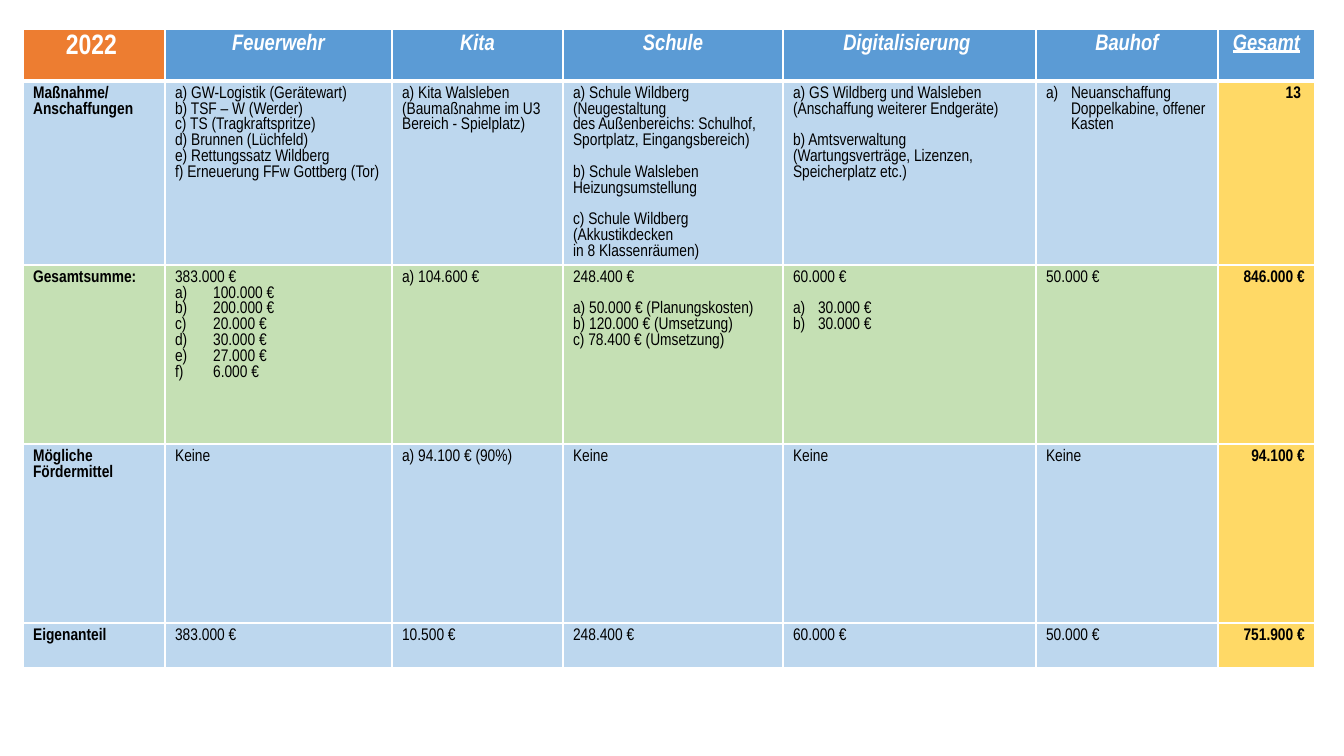
from collections import namedtuple

from lxml import etree
from pptx import Presentation
from pptx import util as u
from pptx.dml.color import RGBColor
from pptx.enum import text
from pptx.oxml import ns

EMU_PER_PX = 914400 / 100.8
FONT = "Arial Narrow"
WHITE, BLACK = "FFFFFF", "000000"
ORANGE, BLUE, GOLD = "ED7D31", "5B9BD5", "FFD966"
PALE_BLUE, PALE_GREEN = "BDD7EE", "C5E0B4"
GAP = 11.25  # one text line, in points
CENTER, RIGHT = text.PP_ALIGN.CENTER, text.PP_ALIGN.RIGHT

# A line of a cell: space above in points, hanging indent of its letter in px
Line = namedtuple("Line", "words gap indent", defaults=(0, 0))

COLUMN_WIDTHS = [142, 227, 171, 220, 253, 182, 97]
ROW_HEIGHTS = [52, 184, 179, 179, 45]
AREAS = ["Feuerwehr", "Kita", "Schule", "Digitalisierung ", "Bauhof"]

MEASURES = [
    [Line("a) GW-Logistik (Gerätewart)"), Line("b) TSF – W (Werder)"),
     Line("c) TS (Tragkraftspritze)"), Line("d) Brunnen (Lüchfeld)"),
     Line("e) Rettungssatz Wildberg"), Line("f) Erneuerung FFw Gottberg (Tor)")],
    [Line("a) Kita Walsleben (Baumaßnahme im U3 Bereich - Spielplatz)")],
    [Line("a) Schule Wildberg (Neugestaltung"), Line("des Außenbereichs: Schulhof,"),
     Line("Sportplatz, Eingangsbereich)"),
     Line("b) Schule Walsleben Heizungsumstellung", GAP),
     Line("c) Schule Wildberg (Akkustikdecken", GAP), Line("in 8 Klassenräumen)")],
    [Line("a) GS Wildberg und Walsleben"), Line("(Anschaffung weiterer Endgeräte)"),
     Line("b) Amtsverwaltung", GAP),
     Line("(Wartungsverträge, Lizenzen, Speicherplatz etc.)")],
    [Line("Neuanschaffung Doppelkabine, offener Kasten", indent=25)],
]
FIRE_SUMS = ["100.000 €", "200.000 €", "20.000 €", "30.000 €", "27.000 €", "6.000 €"]
SUMS = [
    [Line("383.000 €")] + [Line(amount, indent=38) for amount in FIRE_SUMS],
    [Line("a) 104.600 €")],
    [Line("248.400 €"), Line("a) 50.000 € (Planungskosten)", GAP),
     Line("b) 120.000 € (Umsetzung)"), Line("c) 78.400 € (Umsetzung)")],
    [Line("60.000 €"), Line("30.000 €", GAP, 25), Line("30.000 €", indent=25)],
    [Line("50.000 €")],
]
FUNDING = [[Line(words)] for words in
           ["Keine", "a) 94.100 € (90%)", "Keine", "Keine", "Keine"]]
OWN_SHARE = [[Line(words)] for words in
             ["383.000 €", "10.500 €", "248.400 €", "60.000 €", "50.000 €"]]

# Heading, cells, total, fill
BODY = [
    ("Maßnahme/ Anschaffungen", MEASURES, "13 ", PALE_BLUE),
    ("Gesamtsumme:", SUMS, "846.000 €", PALE_GREEN),
    ("Mögliche Fördermittel", FUNDING, "94.100 €", PALE_BLUE),
    ("Eigenanteil", OWN_SHARE, "751.900 €", PALE_BLUE),
]


def px(length):
    return u.Emu(round(length * EMU_PER_PX))


def color(value):
    return RGBColor.from_string(value)


def add_span(para, words, size=12, ink=BLACK, bold=False, italic=False, underline=False):
    span = para.add_run()
    span.text = words
    font = span.font
    font.name, font.size = FONT, u.Pt(size)
    font.bold, font.italic, font.underline = bold, italic, underline
    font.color.rgb = color(ink)


def number_para(para, indent):
    """Give the paragraph an automatic letter, a) b) c), with a hanging indent."""
    props = para._p.get_or_add_pPr()
    props.set("marL", str(px(indent)))
    props.set("indent", str(-px(indent)))
    etree.SubElement(props, ns.qn("a:buFont"), typeface=FONT)
    etree.SubElement(props, ns.qn("a:buAutoNum"), type="alphaLcParenR")


def style_cell(cell, fill, top=1, bottom=1):
    """Fill the cell and draw its white borders, widths in points."""
    cell.fill.solid()
    cell.fill.fore_color.rgb = color(fill)
    props = cell._tc.get_or_add_tcPr()
    for place, (side, width) in enumerate(
            [("lnL", 1), ("lnR", 1), ("lnT", top), ("lnB", bottom)]):
        border = etree.Element(ns.qn("a:" + side), w=str(u.Pt(width)))
        paint = etree.SubElement(border, ns.qn("a:solidFill"))
        etree.SubElement(paint, ns.qn("a:srgbClr"), val=WHITE)
        props.insert(place, border)


def write_lines(cell, lines, bold=False, align=None):
    for index, line in enumerate(lines):
        frame = cell.text_frame
        para = frame.add_paragraph() if index else frame.paragraphs[0]
        para.alignment = align
        if line.gap:
            para.space_before = u.Pt(line.gap)
        if line.indent:
            number_para(para, line.indent)
        add_span(para, line.words, bold=bold)


def add_budget_table(page):
    frame = page.shapes.add_table(len(ROW_HEIGHTS), len(COLUMN_WIDTHS), px(23), px(29),
                                  px(sum(COLUMN_WIDTHS)), px(sum(ROW_HEIGHTS)))
    table = frame.table
    table.first_row = table.horz_banding = False
    for column, width in zip(table.columns, COLUMN_WIDTHS):
        column.width = px(width)
    for row, height in zip(table.rows, ROW_HEIGHTS):
        row.height = px(height)
    return table


def fill_header(table):
    for index, words in enumerate(["2022", *AREAS, "Gesamt"]):
        cell = table.cell(0, index)
        style_cell(cell, BLUE if index else ORANGE, bottom=3)
        para = cell.text_frame.paragraphs[0]
        para.alignment = CENTER
        if index:
            add_span(para, words, 16, WHITE, True, True, words == "Gesamt")
        else:
            add_span(para, words, 20, WHITE, True)
            add_span(para, " ", 16, WHITE, True)


def fill_body(table):
    last = len(COLUMN_WIDTHS) - 1
    for row, (heading, contents, total, fill) in enumerate(BODY, start=1):
        cells = [[Line(heading)], *contents, [Line(total)]]
        for index, lines in enumerate(cells):
            cell = table.cell(row, index)
            style_cell(cell, GOLD if index == last else fill, top=3 if row == 1 else 1)
            write_lines(cell, lines, bold=index in (0, last),
                        align=RIGHT if index == last else None)


def main():
    deck = Presentation()
    deck.slide_width, deck.slide_height = px(1344), px(756)
    page = deck.slides.add_slide(deck.slide_layouts[6])
    table = add_budget_table(page)
    fill_header(table)
    fill_body(table)
    deck.save("out.pptx")


if __name__ == "__main__":
    main()
